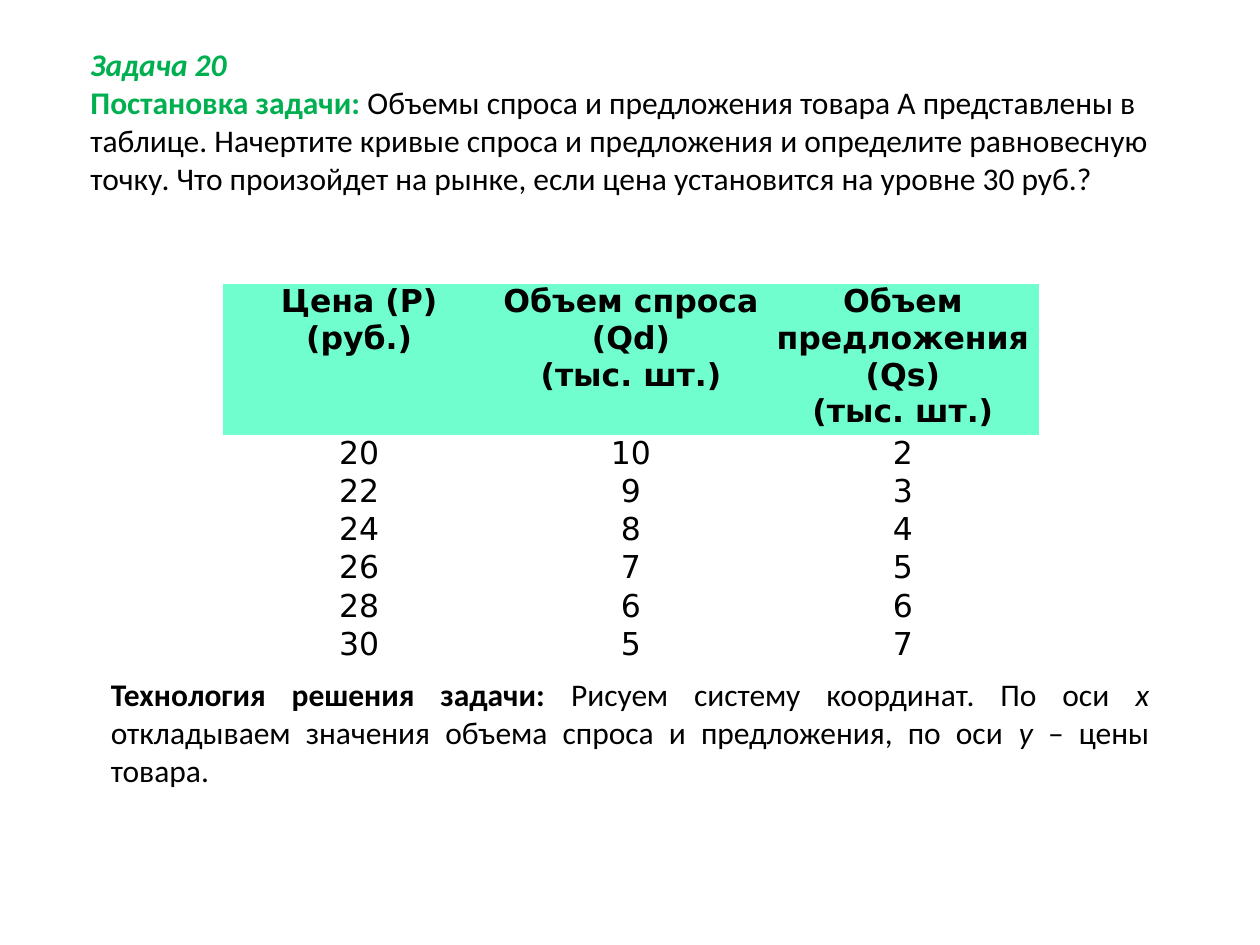
from dataclasses import dataclass

from pptx import Presentation
from pptx import util as u
from pptx.dml import color
from pptx.enum import text
from pptx.oxml import ns

BLACK, GREEN, MINT = "000000", "00B050", "70FECF"
NO_STYLE_NO_GRID = "{2D5ABB26-0587-4C30-8999-92F81FD0307C}"
ALIGN = text.PP_ALIGN


@dataclass
class Span:
    words: str
    hue: str = BLACK
    bold: bool = False
    italic: bool = False


@dataclass
class Block:
    left: float
    top: float
    width: float
    height: float
    align: ALIGN
    paragraphs: list[list[Span]]


def rgb(value: str) -> color.RGBColor:
    return color.RGBColor.from_string(value)


def add_span(para, span: Span, font_name: str) -> None:
    """Add a span, turning each newline into a line break."""
    style = {"name": font_name, "size": u.Pt(18),
             "bold": span.bold, "italic": span.italic}
    for number, line in enumerate(span.words.split("\n")):
        if number:
            para.add_line_break()
        run = para.add_run()
        run.text = line
        for key, value in style.items():
            setattr(run.font, key, value)
        run.font.color.rgb = rgb(span.hue)


def fill_placeholder(box, block: Block) -> None:
    for side in ("left", "top", "width", "height"):
        setattr(box, side, u.Cm(getattr(block, side)))
    frame = box.text_frame
    frame_format = {"word_wrap": True, "auto_size": text.MSO_AUTO_SIZE.NONE,
                    "vertical_anchor": text.MSO_ANCHOR.TOP}
    for key, value in frame_format.items():
        setattr(frame, key, value)
    for number, spans in enumerate(block.paragraphs):
        para = frame.add_paragraph() if number else frame.paragraphs[0]
        para.alignment = block.align
        para.space_before = u.Pt(0)
        # Plain paragraph: no bullet and no hanging indent
        properties = para._p.get_or_add_pPr()
        properties.set("marL", "0")
        properties.set("indent", "0")
        properties.append(properties.makeelement(ns.qn("a:buNone"), {}))
        for span in spans:
            add_span(para, span, "Calibri")


def add_market_table(page, rows: list[tuple]) -> None:
    column_width, header_height, row_height = 5.48, 3.05, 0.77
    columns = len(rows[0])
    frame = page.shapes.add_table(
        len(rows), columns, u.Cm(4.5), u.Cm(5.72), u.Cm(column_width * columns),
        u.Cm(header_height + row_height * (len(rows) - 1)))
    table = frame.table
    table._tbl.tblPr.find(ns.qn("a:tableStyleId")).text = NO_STYLE_NO_GRID
    for column in table.columns:
        column.width = u.Cm(column_width)
    for row_number, values in enumerate(rows):
        header = row_number == 0
        table.rows[row_number].height = u.Cm(header_height if header else row_height)
        for column_number, value in enumerate(values):
            cell = table.cell(row_number, column_number)
            for side in ("left", "right", "top", "bottom"):
                setattr(cell, f"margin_{side}", 0)
            if header:
                cell.fill.solid()
                cell.fill.fore_color.rgb = rgb(MINT)
            else:
                cell.fill.background()
            para = cell.text_frame.paragraphs[0]
            para.alignment = ALIGN.CENTER
            add_span(para, Span(str(value), bold=header), "DejaVu Sans")


TASK = Block(1.57, 0.79, 22.81, 3.33, ALIGN.LEFT, [
    [Span("Задача 20", GREEN, bold=True, italic=True)],
    [Span("Постановка задачи: ", GREEN, bold=True),
     Span("Объемы спроса и предложения товара А представлены в таблице. "
          "Начертите кривые спроса и предложения и определите равновесную точку. "
          "Что произойдет на рынке, если цена установится на уровне 30 руб.?")],
])

SOLUTION = Block(1.98, 13.49, 21.44, 4.11, ALIGN.JUSTIFY, [
    [Span("Технология решения задачи: ", bold=True),
     Span("Рисуем систему координат. По оси "),
     Span("х", italic=True),
     Span(" откладываем значения объема спроса и предложения, по оси "),
     Span("у", italic=True),
     Span(" – цены товара.")],
])

MARKET = [
    ("Цена (Р)\n(руб.)", "Объем спроса (Qd)\n(тыс. шт.)",
     "Объем предложения (Qs)\n(тыс. шт.)"),
    (20, 10, 2),
    (22, 9, 3),
    (24, 8, 4),
    (26, 7, 5),
    (28, 6, 6),
    (30, 5, 7),
]


def main() -> None:
    deck = Presentation()
    deck.slide_width, deck.slide_height = u.Cm(25.4), u.Cm(19.05)
    page = deck.slides.add_slide(deck.slide_layouts[1])

    # Task statement, demand and supply table, solution
    fill_placeholder(page.shapes.title, TASK)
    add_market_table(page, MARKET)
    fill_placeholder(page.placeholders[1], SOLUTION)

    deck.save("out.pptx")


if __name__ == "__main__":
    main()
